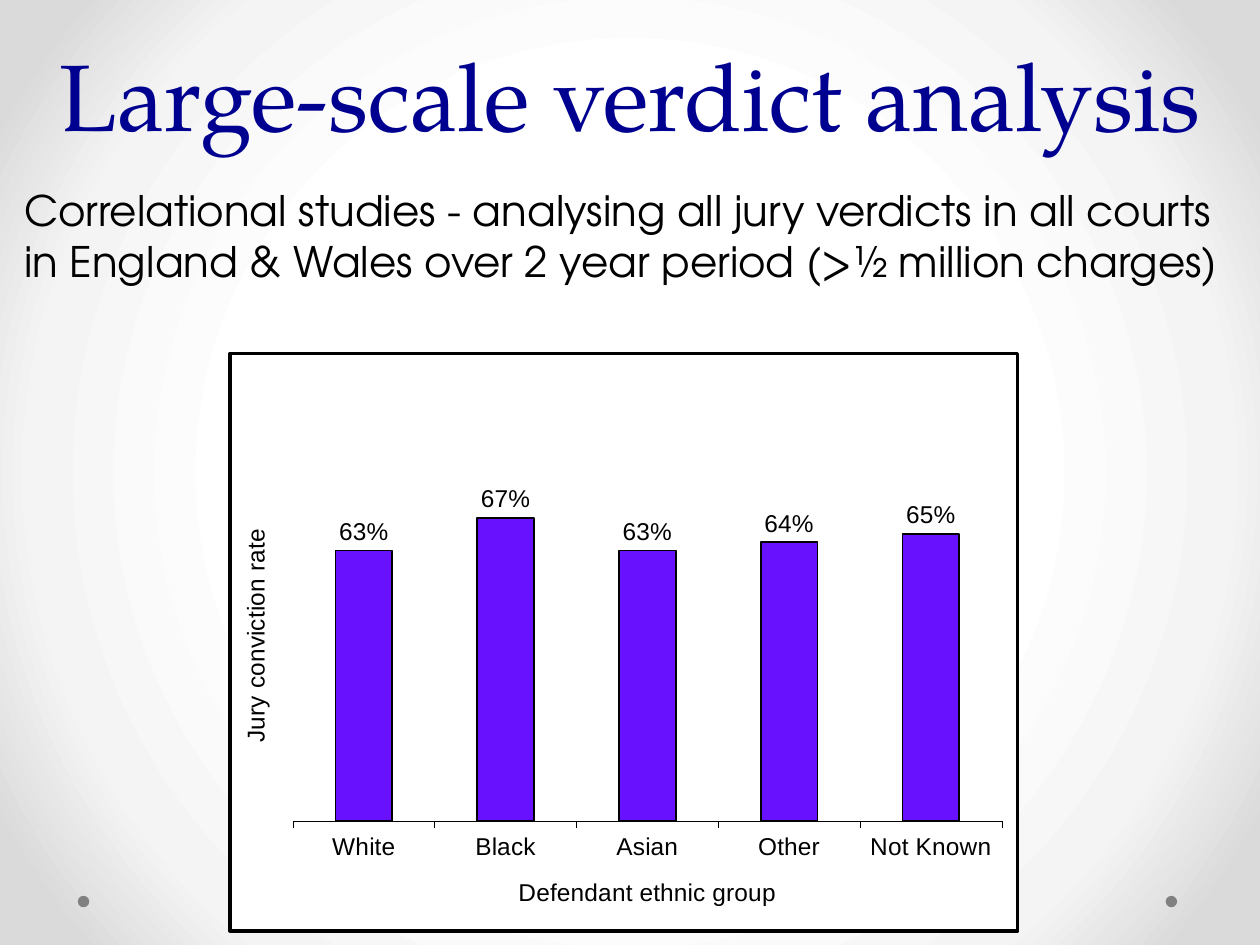
from lxml import etree
from pptx import Presentation
from pptx.chart.data import CategoryChartData
from pptx.dml.color import RGBColor
from pptx.enum.chart import XL_CHART_TYPE as ChartType, XL_LABEL_POSITION as LabelPos
from pptx.enum.chart import XL_TICK_LABEL_POSITION as TickLabels, XL_TICK_MARK as Tick
from pptx.enum.shapes import MSO_SHAPE as Shape
from pptx.enum.text import MSO_ANCHOR as Anchor, MSO_AUTO_SIZE as AutoSize, PP_ALIGN as Align
from pptx.oxml import parse_xml
from pptx.oxml.ns import nsdecls, qn
from pptx.util import Cm, Pt

COLORS = {"title": "000090", "text": "000000", "dot": "808080", "bar": "6711FF",
          "panel": "FFFFFF", "bg_mid": "F4F4F4", "bg_edge": "DADADA"}
RATES = {"White": 0.63, "Black": 0.67, "Asian": 0.63, "Other": 0.64, "Not Known": 0.65}


def rgb(name):
    return RGBColor.from_string(COLORS[name])


def set_font(font, name, size, color):
    font.name, font.size, font.bold = name, Pt(size), False
    font.color.rgb = rgb(color)


def place(sp, box):
    sp.left, sp.top, sp.width, sp.height = (Cm(v) for v in box)


def add_background(s):
    """Radial gradient, white in the centre and grey at the corners."""
    s.background.fill.gradient()
    grad = s.background._cSld.find(".//" + qn("a:gradFill"))
    for child in list(grad):
        grad.remove(child)
    stops = etree.SubElement(grad, qn("a:gsLst"))
    for pos, name in ((50, "panel"), (76, "bg_mid"), (92, "bg_edge")):
        gs = etree.SubElement(stops, qn("a:gs"), pos=str(pos * 1000))
        etree.SubElement(gs, qn("a:srgbClr"), val=COLORS[name])
    radial = etree.SubElement(grad, qn("a:path"))
    radial.set("path", "circle")
    etree.SubElement(radial, qn("a:fillToRect"),
                     {side: "50000" for side in "ltrb"})


def add_dots(s, box):
    """One dot at each end of the box, as wide as the box is high."""
    left, top, width, size = box
    for x in (left, left + width - size):
        dot = s.shapes.add_shape(Shape.OVAL, Cm(x), Cm(top), Cm(size), Cm(size))
        dot.shadow.inherit = False
        dot.fill.solid()
        dot.fill.fore_color.rgb = rgb("dot")
        dot.line.fill.background()


def fill_title(sp, box, text):
    place(sp, box)
    tf = sp.text_frame
    tf.text = text
    tf.auto_size, tf.vertical_anchor = AutoSize.NONE, Anchor.BOTTOM
    p = tf.paragraphs[0]
    p.alignment, p.line_spacing = Align.CENTER, Pt(58)
    set_font(p.font, "TeX Gyre Pagella", 54, "title")


def fill_body(sp, box, text):
    place(sp, box)
    tf = sp.text_frame
    tf.text = text
    tf.auto_size = AutoSize.NONE
    p = tf.paragraphs[0]
    set_font(p.font, "TeX Gyre Adventor", 24, "text")
    pPr = p._p.get_or_add_pPr()
    pPr.set("marL", "0")
    pPr.set("indent", "0")
    pPr.insert(0, parse_xml(f'<a:buNone {nsdecls("a")}/>'))


def set_axis_title(axis, text):
    tf = axis.axis_title.text_frame
    tf.text = text
    set_font(tf.paragraphs[0].font, "Arial", 14, "text")


def frame_chart(chart):
    """White panel with a black border around the whole chart."""
    chart._chartSpace.find(qn("c:chart")).addnext(parse_xml(
        f'<c:spPr {nsdecls("c", "a")}>'
        f'<a:solidFill><a:srgbClr val="{COLORS["panel"]}"/></a:solidFill>'
        f'<a:ln w="{Pt(2)}"><a:solidFill><a:srgbClr val="{COLORS["text"]}"/>'
        '</a:solidFill></a:ln></c:spPr>'))


def set_plot_layout(chart, x, y, w, h):
    """Place the inner plot area in fractions of the chart."""
    area = chart._chartSpace.find(".//" + qn("c:plotArea"))
    for old in area.findall(qn("c:layout")):
        area.remove(old)
    layout = parse_xml(f'<c:layout {nsdecls("c")}><c:manualLayout/></c:layout>')
    for tag, val in (("layoutTarget", "inner"), ("xMode", "edge"), ("yMode", "edge"),
                     ("x", x), ("y", y), ("w", w), ("h", h)):
        etree.SubElement(layout[0], qn("c:" + tag), val=str(val))
    area.insert(0, layout)


def add_rate_chart(s, box):
    data = CategoryChartData(number_format="0%")
    data.categories = list(RATES)
    data.add_series("Series 1", list(RATES.values()))
    chart = s.shapes.add_chart(ChartType.COLUMN_CLUSTERED, *(Cm(v) for v in box), data).chart
    chart.has_legend = chart.has_title = False
    set_font(chart.font, "Arial", 14, "text")
    frame_chart(chart)
    set_plot_layout(chart, 0.08, 0.1, 0.9, 0.71)

    groups, rate = chart.category_axis, chart.value_axis
    groups.major_tick_mark = Tick.OUTSIDE
    groups.tick_label_position = TickLabels.LOW
    groups.format.line.width = Pt(0.25)
    groups.format.line.color.rgb = rgb("text")
    set_font(groups.tick_labels.font, "Arial", 14, "text")
    set_axis_title(groups, "Defendant ethnic group")
    rate.minimum_scale, rate.maximum_scale = 0.3, 0.8
    rate.has_major_gridlines = rate.visible = False
    set_axis_title(rate, "Jury conviction rate")

    plot = chart.plots[0]
    plot.gap_width, plot.vary_by_categories = 150, False
    bars = plot.series[0]
    bars.format.fill.solid()
    bars.format.fill.fore_color.rgb = rgb("bar")
    bars.format.line.width = Pt(1)
    bars.format.line.color.rgb = rgb("text")
    labels = bars.data_labels
    labels.show_value = True
    labels.number_format, labels.number_format_is_linked = "0%", False
    labels.position = LabelPos.OUTSIDE_END
    set_font(labels.font, "Arial", 14, "text")


def main():
    prs = Presentation()
    prs.slide_width, prs.slide_height = Cm(25.4), Cm(19.05)
    s = prs.slides.add_slide(prs.slide_layouts[1])
    add_background(s)
    add_dots(s, (1.57, 18.06, 22.16, 0.23))
    fill_title(s.shapes.title, (0, 0, 25.4, 3.15), "Large-scale verdict analysis")
    fill_body(s.placeholders[1], (0.23, 3.6, 25.17, 3.48),
              "Correlational studies - analysing all jury verdicts in all courts "
              "in England & Wales over 2 year period (>½ million charges)")
    add_rate_chart(s, (4.6, 7.09, 15.95, 11.71))
    prs.save("out.pptx")


if __name__ == "__main__":
    main()
